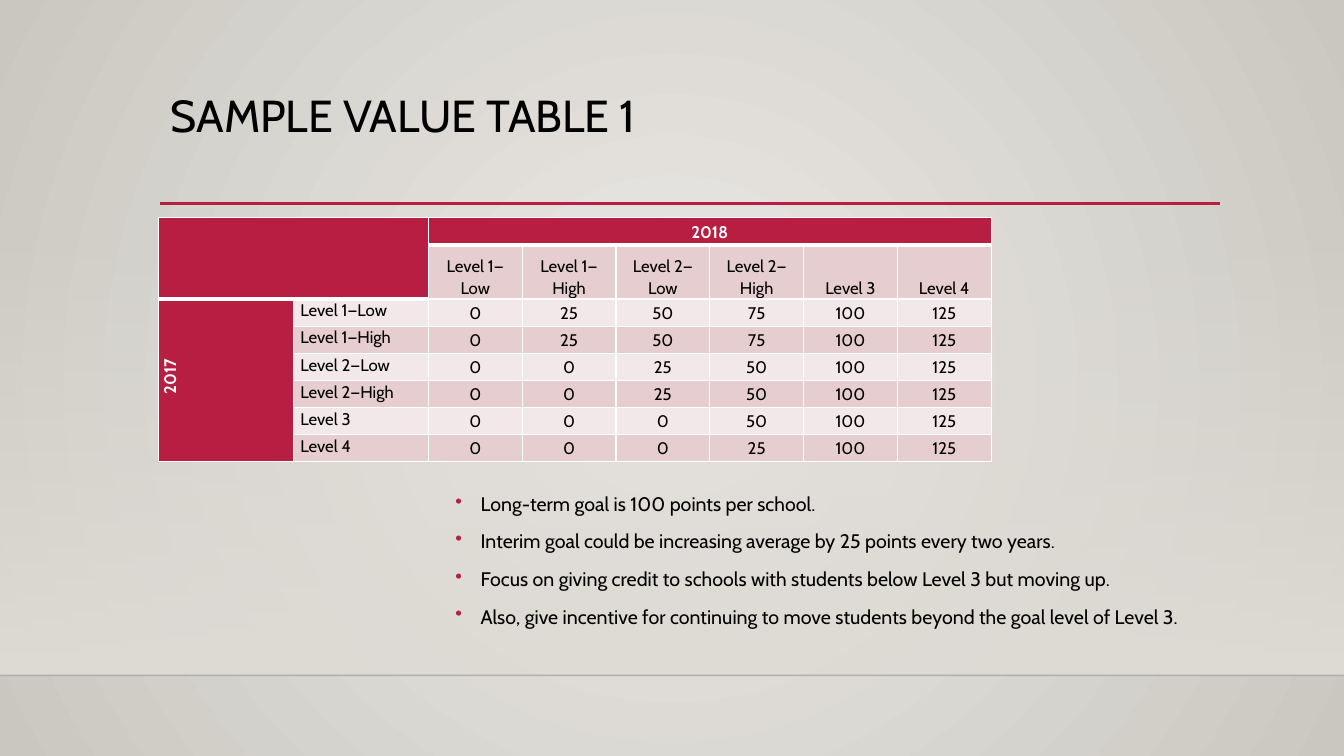
import pptx
import pptx.util
import pptx.dml.color
import pptx.enum.shapes
import pptx.enum.text
import pptx.oxml
import pptx.oxml.ns

ALIGN = pptx.enum.text.PP_ALIGN
ANCHOR = pptx.enum.text.MSO_ANCHOR
RED, PINK, PALE = "B71E42", "E6CDCF", "F3E8E9"
BLACK, WHITE, SAND = "000000", "FFFFFF", "DFDBD5"


def color(code):
    return pptx.dml.color.RGBColor.from_string(code)


def node(tag, body="", attrs=""):
    space = pptx.oxml.ns.nsdecls("a")
    return pptx.oxml.parse_xml(f"<a:{tag} {space} {attrs}>{body}</a:{tag}>")


def fade(part, code, alpha):
    """Set the opacity, in percent, of a colour inside an XML part."""
    for item in part.iter(pptx.oxml.ns.qn("a:srgbClr")):
        if item.get("val") == code:
            item.append(node("alpha", attrs=f'val="{alpha * 1000}"'))
            break


class Deck:
    """Style and current slide; places are percent of the slide's size."""

    font = "Cabin"

    def __init__(self):
        self.file = pptx.Presentation()
        self.file.slide_width = pptx.util.Inches(13.33)
        self.file.slide_height = pptx.util.Inches(7.5)
        self.slide = self.file.slides.add_slide(self.file.slide_layouts[6])
        self.shapes = self.slide.shapes

    def wide(self, share):
        return round(self.file.slide_width * share / 100)

    def high(self, share):
        return round(self.file.slide_height * share / 100)

    def area(self, x, y, w, h):
        return self.wide(x), self.high(y), self.wide(w), self.high(h)

    def blend(self, fill, first, last):
        fill.gradient()
        for stop, code, spot in zip(fill.gradient_stops, (first, last), (0, 1)):
            stop.color.rgb = color(code)
            stop.position = spot

    def back(self, inner, outer):
        self.blend(self.slide.background.fill, inner, outer)
        line = next(self.slide.element.iter(pptx.oxml.ns.qn("a:lin")))
        focus = '<a:fillToRect l="50000" t="50000" r="50000" b="50000"/>'
        line.getparent().replace(line, node("path", focus, 'path="circle"'))

    def veil(self, x, y, w, h, code):
        """Draw a panel that fades in from top to bottom."""
        kind = pptx.enum.shapes.MSO_SHAPE.RECTANGLE
        shape = self.shapes.add_shape(kind, *self.area(x, y, w, h))
        shape.shadow.inherit = False
        shape.line.fill.background()
        self.blend(shape.fill, code, code)
        shape.fill.gradient_angle = 270
        fade(shape.element.spPr, code, 0)

    def rule(self, x, y, end, code, width, alpha=100):
        kind = pptx.enum.shapes.MSO_CONNECTOR.STRAIGHT
        line = self.shapes.add_connector(
            kind, self.wide(x), self.high(y), self.wide(end), self.high(y))
        line.line.color.rgb = color(code)
        line.line.width = pptx.util.Pt(width)
        if alpha < 100:
            fade(line.element.spPr, code, alpha)
        line.element.spPr.append(node("effectLst"))

    def put(self, par, text, size, code=BLACK, bold=False):
        run = par.add_run()
        run.text = text
        run.font.name = self.font
        run.font.size = pptx.util.Pt(size)
        run.font.bold = bold
        run.font.color.rgb = color(code)

    def text(self, x, y, w, h, lines, size, space=1.0, dots=False):
        frame = self.shapes.add_textbox(*self.area(x, y, w, h)).text_frame
        frame.word_wrap = True
        for i, line in enumerate(lines):
            par = frame.add_paragraph() if i else frame.paragraphs[0]
            par.line_spacing = space
            par.space_before = pptx.util.Pt(10 if i else 0)
            if dots:
                props = par._p.get_or_add_pPr()
                inch = pptx.util.Inches(0.25)
                props.set("marL", str(inch))
                props.set("indent", str(-inch))
                props.append(node("buClr", f'<a:srgbClr val="{RED}"/>'))
                props.append(node("buChar", attrs='char="•"'))
            self.put(par, line, size)

    def table(self, x, y, cols, rows):
        size = self.area(x, y, sum(cols), sum(rows))
        grid = self.shapes.add_table(len(rows), len(cols), *size).table
        grid.first_row = grid.horz_banding = False
        for col, share in zip(grid.columns, cols):
            col.width = self.wide(share)
        for row, share in zip(grid.rows, rows):
            row.height = self.high(share)
        return grid

    def cell(self, cell, fill, top=1, low=1):
        props = cell._tc.get_or_add_tcPr()
        for side, width in zip("LRTB", (1, 1, top, low)):
            paint = f'<a:solidFill><a:srgbClr val="{WHITE}"/></a:solidFill>'
            props.append(node(f"ln{side}", paint, f'w="{width * 12700}"'))
        cell.fill.solid()
        cell.fill.fore_color.rgb = color(fill)
        cell.margin_left = cell.margin_right = pptx.util.Inches(0.07)
        cell.margin_top = cell.margin_bottom = 0

    def label(self, cell, text, anchor=ANCHOR.MIDDLE, align=ALIGN.CENTER,
              code=BLACK, bold=False):
        cell.vertical_anchor = anchor
        par = cell.text_frame.paragraphs[0]
        par.alignment = align
        par.line_spacing = 1.07
        self.put(par, text, 12, code, bold)
        return par


def main():
    deck = Deck()

    # Backdrop, floor line and title
    deck.back("ECEAE7", "CAC7C1")
    deck.veil(0, 29.47, 100, 59.87, SAND)
    deck.rule(0, 89.33, 100, "000001", 1, alpha=20)
    deck.rule(11.93, 26.93, 90.77, RED, 2.5)
    deck.text(11.93, 11.73, 78.75, 15.33, ["SAMPLE VALUE TABLE 1"], 32, 0.9)

    # Goals
    goals = [
        "Long-term goal is 100 points per school.",
        "Interim goal could be increasing average by 25 points every two years.",
        "Focus on giving credit to schools with students below Level 3 but moving up.",
        "Also, give incentive for continuing to move students beyond the goal level of Level 3.",
    ]
    deck.text(33.15, 64.4, 57.53, 19.47, goals, 14, dots=True)

    # Table grid: two header columns and two header rows
    levels = ["Level 1—Low", "Level 1—High", "Level 2—Low",
              "Level 2—High", "Level 3", "Level 4"]
    points = [
        [0, 25, 50, 75, 100, 125],
        [0, 25, 50, 75, 100, 125],
        [0, 0, 25, 50, 100, 125],
        [0, 0, 25, 50, 100, 125],
        [0, 0, 0, 50, 100, 125],
        [0, 0, 0, 25, 100, 125],
    ]
    step = 3.59
    grid = deck.table(11.78, 28.8, [10.05] * 2 + [6.98] * 6,
                      [step, 2 * step] + [step] * 6)

    # Fills and borders, heavy below the red heads
    def edge(r, c):
        return 3 if r == 0 or (r == 1 and c < 2) else 1

    for r in range(8):
        for c in range(8):
            head = r == 0 or c == 0 or (r == 1 and c == 1)
            fill = RED if head else PINK if r % 2 else PALE
            deck.cell(grid.cell(r, c), fill, edge(r - 1, c), edge(r, c))
    for first, last in (((0, 0), (1, 1)), ((0, 2), (0, 7)), ((2, 0), (7, 0))):
        grid.cell(*first).merge(grid.cell(*last))

    # Years
    deck.label(grid.cell(0, 2), "2018", code=WHITE, bold=True)
    year = grid.cell(2, 0)
    par = deck.label(year, "2017", code=WHITE, bold=True)
    par._p.get_or_add_pPr().set("marL", str(pptx.util.Inches(0.08)))
    year._tc.get_or_add_tcPr().set("vert", "vert270")

    # Levels and points
    for i, (level, row) in enumerate(zip(levels, points), 2):
        deck.label(grid.cell(1, i), level, ANCHOR.BOTTOM)
        deck.label(grid.cell(i, 1), level, ANCHOR.TOP, ALIGN.LEFT)
        for c, value in enumerate(row, 2):
            deck.label(grid.cell(i, c), str(value))

    deck.file.save("out.pptx")


if __name__ == "__main__":
    main()
